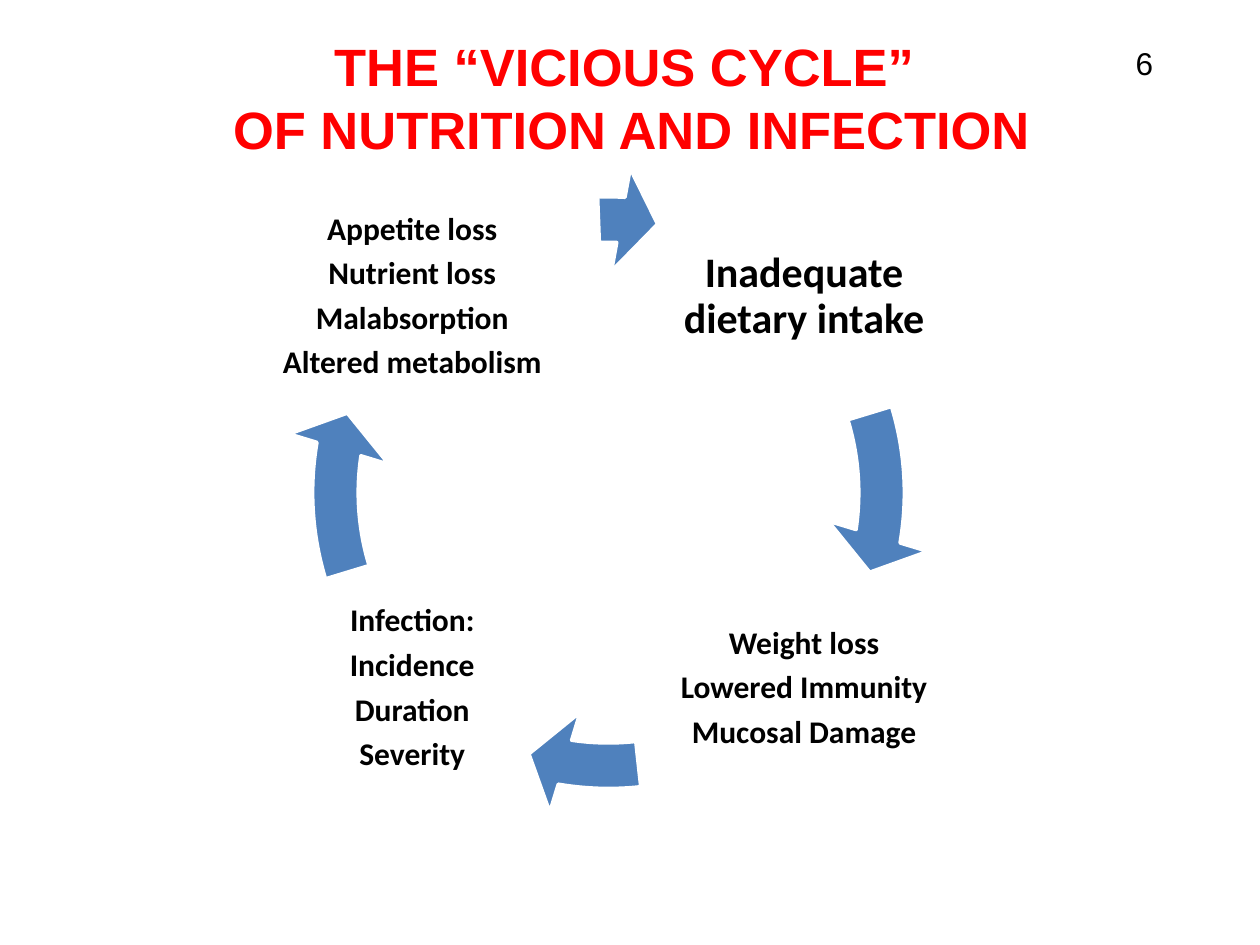
from dataclasses import dataclass

from pptx import Presentation
from pptx.dml.color import RGBColor
from pptx.enum.shapes import MSO_SHAPE
from pptx.enum.text import MSO_ANCHOR, MSO_AUTO_SIZE, PP_ALIGN
from pptx.util import Pt


@dataclass(frozen=True)
class Theme:
    title_color: RGBColor = RGBColor(0xFF, 0x00, 0x00)
    text_color: RGBColor = RGBColor(0x00, 0x00, 0x00)
    arrow_color: RGBColor = RGBColor(0x4F, 0x81, 0xBD)
    outline_color: RGBColor = RGBColor(0xFF, 0xFF, 0xFF)
    title_font: str = "Arial"
    stage_font: str = "Calibri"
    title_size: float = 30
    intake_size: float = 24
    stage_size: float = 18
    number_size: float = 18


@dataclass(frozen=True)
class Stage:
    lines: tuple[str, ...]
    center: float
    top: float
    width: float
    size: float


@dataclass(frozen=True)
class Arrow:
    end: float
    start: float


THEME = Theme()
LEFT_CENTER, RIGHT_CENTER = 235.6, 459.5
UPPER_ROW, LOWER_ROW = 103.7, 327.6
STAGE_HEIGHT = 131.8
STAGE_INSET = 2.2
RING_LEFT, RING_TOP, RING_SIZE = 162, 95.8, 371.5
ARROW_THICKNESS, ARROW_HEAD, ARROW_WIDTH = 0.07, 4.65, 0.08

STAGES = (
    Stage(("Inadequate dietary intake",), RIGHT_CENTER, UPPER_ROW, 167, THEME.intake_size),
    Stage(("Weight loss", "Lowered Immunity", "Mucosal Damage"),
          RIGHT_CENTER, LOWER_ROW, 189.4, THEME.stage_size),
    Stage(("Infection:", "Incidence", "Duration", "Severity"),
          LEFT_CENTER, LOWER_ROW, 131.8, THEME.stage_size),
    Stage(("Appetite loss", "Nutrient loss", "Malabsorption", "Altered metabolism"),
          LEFT_CENTER, UPPER_ROW, 211.7, THEME.stage_size),
)
ARROWS = (
    Arrow(5.51, 205.84),
    Arrow(59.51, 50.25),
    Arrow(113.51, 97.84),
    Arrow(163.56, 160.74),
)


def write_text(frame, lines, *, font, size, color, bold=False, align=PP_ALIGN.CENTER,
               line_spacing=None, space_after=None) -> None:
    for index, line in enumerate(lines):
        para = frame.paragraphs[0] if index == 0 else frame.add_paragraph()
        para.alignment = align
        para.line_spacing = line_spacing
        para.space_after = space_after
        for part_index, part in enumerate(line.split("\n")):
            if part_index:
                para.add_line_break()
            span = para.add_run()
            span.text = part
            span.font.name = font
            span.font.size = Pt(size)
            span.font.bold = bold
            span.font.color.rgb = color


def draw_title(page) -> None:
    title = page.shapes.title
    title.left, title.top, title.width, title.height = Pt(18), Pt(16), Pt(686), Pt(78.5)
    title.text_frame.vertical_anchor = MSO_ANCHOR.MIDDLE
    title.text_frame.auto_size = MSO_AUTO_SIZE.NONE
    write_text(title.text_frame, ("THE “VICIOUS CYCLE” \nOF NUTRITION AND INFECTION",),
               font=THEME.title_font, size=THEME.title_size, color=THEME.title_color, bold=True)


def draw_stage(page, stage: Stage) -> None:
    box = page.shapes.add_textbox(Pt(stage.center - stage.width / 2), Pt(stage.top),
                                  Pt(stage.width), Pt(STAGE_HEIGHT))
    frame = box.text_frame
    frame.word_wrap = True
    frame.vertical_anchor = MSO_ANCHOR.MIDDLE
    frame.margin_left = frame.margin_right = Pt(STAGE_INSET)
    frame.margin_top = frame.margin_bottom = Pt(STAGE_INSET)
    write_text(frame, stage.lines, font=THEME.stage_font, size=stage.size,
               color=THEME.text_color, bold=True, line_spacing=0.9, space_after=Pt(6))


def draw_arrow(page, arrow: Arrow) -> None:
    shape = page.shapes.add_shape(MSO_SHAPE.CIRCULAR_ARROW, Pt(RING_LEFT), Pt(RING_TOP),
                                  Pt(RING_SIZE), Pt(RING_SIZE))
    values = (ARROW_THICKNESS, ARROW_HEAD, arrow.end, arrow.start, ARROW_WIDTH)
    for index, value in enumerate(values):
        shape.adjustments[index] = value
    shape.shadow.inherit = False
    shape.fill.solid()
    shape.fill.fore_color.rgb = THEME.arrow_color
    shape.line.color.rgb = THEME.outline_color
    shape.line.width = Pt(2)


def draw_page_number(page) -> None:
    box = page.shapes.add_textbox(Pt(641.5), Pt(21.6), Pt(24.5), Pt(28.8))
    box.text_frame.word_wrap = False
    box.text_frame.auto_size = MSO_AUTO_SIZE.SHAPE_TO_FIT_TEXT
    write_text(box.text_frame, ("6",), font=THEME.title_font, size=THEME.number_size,
               color=THEME.text_color, align=PP_ALIGN.RIGHT)


def main() -> None:
    deck = Presentation()
    deck.slide_width, deck.slide_height = Pt(720), Pt(540)
    page = deck.slides.add_slide(deck.slide_layouts[5])
    draw_title(page)
    for stage, arrow in zip(STAGES, ARROWS):
        draw_stage(page, stage)
        draw_arrow(page, arrow)
    draw_page_number(page)
    deck.save("out.pptx")


if __name__ == "__main__":
    main()
